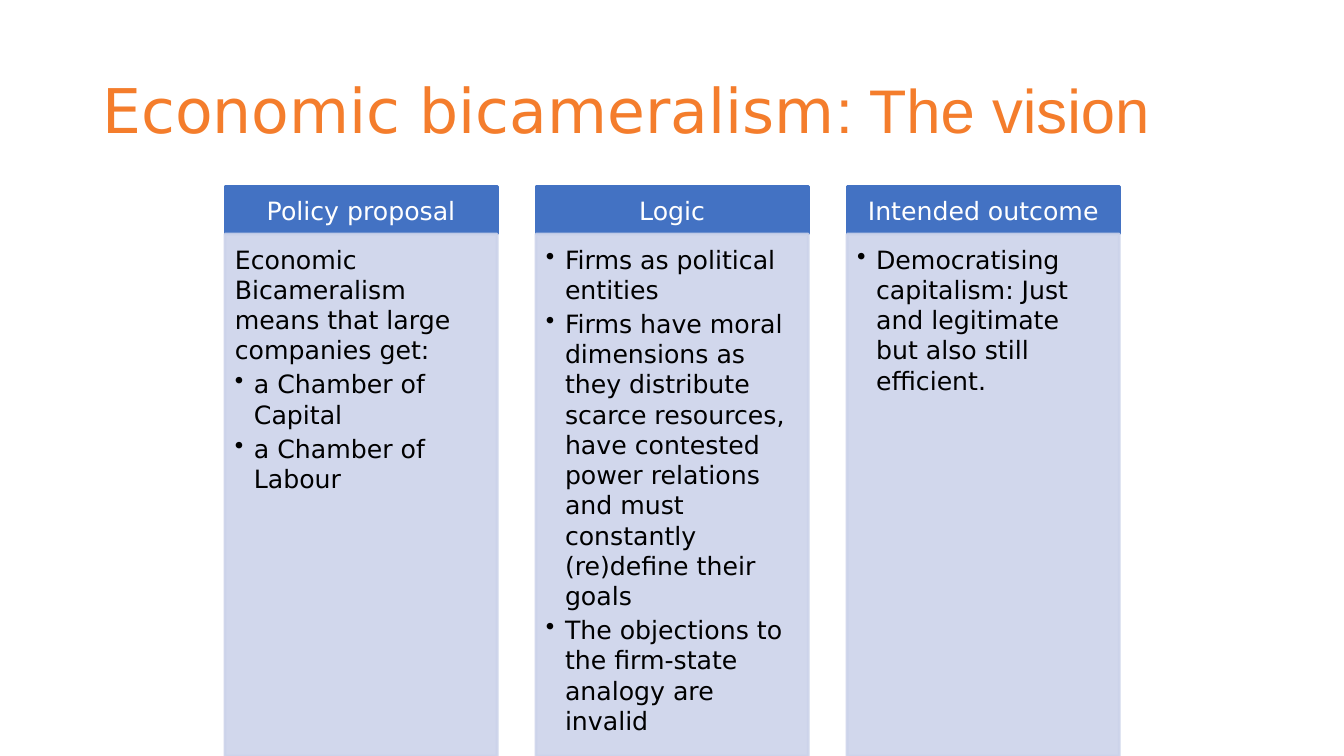
"""Build a slide setting out the vision of economic bicameralism in three columns."""
import lxml.etree
import pptx
import pptx.dml.color
import pptx.enum.shapes
import pptx.enum.text
import pptx.oxml.ns
import pptx.util

Cm = pptx.util.Cm
Pt = pptx.util.Pt

TITLE = [("Economic bicameralism", "DejaVu Sans"), (": The vision", "Arial")]

COLUMNS = [
    {
        "heading": "Policy proposal",
        "intro": "Economic Bicameralism means that large companies get:",
        "points": ["a Chamber of Capital", "a Chamber of Labour"],
    },
    {
        "heading": "Logic",
        "intro": None,
        "points": [
            "Firms as political entities",
            "Firms have moral dimensions as they distribute scarce resources, "
            "have contested power relations and must constantly (re)define their goals",
            "The objections to the firm-state analogy are invalid",
        ],
    },
    {
        "heading": "Intended outcome",
        "intro": None,
        "points": [
            "Democratising capitalism: Just and legitimate but also still efficient."
        ],
    },
]

THEME = {
    "title": "F47D2C",
    "header": "4372C3",
    "panel": "CCD3EA",
    "header_text": "FFFFFF",
    "body_text": "000000",
    "font": "DejaVu Sans",
    "title_size": 44,
    "text_size": 18,
    "line_width": 2,
    "panel_opacity": 90,
}

SLIDE_WIDTH, SLIDE_HEIGHT = 33.87, 19.05
TITLE_BOX = (2.33, 1.02, 29.21, 3.68)
FIRST_LEFT, COLUMN_WIDTH, COLUMN_PITCH = 5.67, 6.86, 7.84
HEADER_TOP, HEADER_HEIGHT = 4.7, 1.2
HEADER_INSETS = (0.36, 0.2, 0.36, 0.2)
PANEL_INSETS = (0.25, 0.25, 0.36, 0.41)
BULLET_INDENT = 0.48
POINT_GAP = 2.7


def color(name):
    return pptx.dml.color.RGBColor.from_string(THEME[name])


def add_element(parent, tag, **attributes):
    return lxml.etree.SubElement(parent, pptx.oxml.ns.qn(tag), attributes)


def set_frame(frame, insets, anchor):
    frame.word_wrap = True
    frame.vertical_anchor = anchor
    (frame.margin_left, frame.margin_top,
     frame.margin_right, frame.margin_bottom) = map(Cm, insets)


def set_font(font, size, color_name, name=THEME["font"]):
    font.name = name
    font.size = Pt(THEME[size])
    font.color.rgb = color(color_name)


def add_box(slide, box, color_name, insets, anchor, opacity=100):
    shape = slide.shapes.add_shape(
        pptx.enum.shapes.MSO_SHAPE.RECTANGLE, *map(Cm, box))
    shape.shadow.inherit = False
    shape.line.width = Pt(THEME["line_width"])
    shape.fill.solid()
    shape.fill.fore_color.rgb = color(color_name)
    shape.line.color.rgb = color(color_name)
    if opacity < 100:
        for value in list(shape.element.spPr.iter(pptx.oxml.ns.qn("a:srgbClr"))):
            add_element(value, "a:alpha", val=str(opacity * 1000))
    set_frame(shape.text_frame, insets, anchor)
    return shape.text_frame


def add_bullet(paragraph):
    paragraph.level = 1
    properties = paragraph._p.get_or_add_pPr()
    properties.set("marL", str(Cm(BULLET_INDENT)))
    properties.set("indent", str(-Cm(BULLET_INDENT)))
    bullet_color = add_element(properties, "a:buClr")
    add_element(bullet_color, "a:srgbClr", val=THEME["body_text"])
    add_element(properties, "a:buChar", char="•")


def add_title(slide):
    frame = slide.shapes.add_textbox(*map(Cm, TITLE_BOX)).text_frame
    set_frame(frame, (0.25, 0.13, 0.25, 0.13), pptx.enum.text.MSO_ANCHOR.MIDDLE)
    paragraph = frame.paragraphs[0]
    paragraph.line_spacing = 0.9
    for text, font_name in TITLE:
        run = paragraph.add_run()
        run.text = text
        set_font(run.font, "title_size", "title", font_name)


def add_column(slide, index, column):
    left = FIRST_LEFT + index * COLUMN_PITCH
    header = add_box(slide, (left, HEADER_TOP, COLUMN_WIDTH, HEADER_HEIGHT),
                     "header", HEADER_INSETS, pptx.enum.text.MSO_ANCHOR.MIDDLE)
    heading = header.paragraphs[0]
    heading.text = column["heading"]
    heading.alignment = pptx.enum.text.PP_ALIGN.CENTER
    set_font(heading.font, "text_size", "header_text")

    panel_top = HEADER_TOP + HEADER_HEIGHT
    panel = add_box(
        slide, (left, panel_top, COLUMN_WIDTH, SLIDE_HEIGHT - panel_top), "panel",
        PANEL_INSETS, pptx.enum.text.MSO_ANCHOR.TOP, THEME["panel_opacity"])
    lines = [(point, True) for point in column["points"]]
    if column["intro"]:
        lines.insert(0, (column["intro"], False))
    for position, (text, bulleted) in enumerate(lines):
        paragraph = panel.add_paragraph() if position else panel.paragraphs[0]
        paragraph.text = text
        paragraph.alignment = pptx.enum.text.PP_ALIGN.LEFT
        if position:
            paragraph.space_before = Pt(POINT_GAP)
        if bulleted:
            add_bullet(paragraph)
        set_font(paragraph.font, "text_size", "body_text")


def main():
    presentation = pptx.Presentation()
    presentation.slide_width = Cm(SLIDE_WIDTH)
    presentation.slide_height = Cm(SLIDE_HEIGHT)
    slide = presentation.slides.add_slide(presentation.slide_layouts[6])
    add_title(slide)
    for index, column in enumerate(COLUMNS):
        add_column(slide, index, column)
    presentation.save("out.pptx")


if __name__ == "__main__":
    main()
